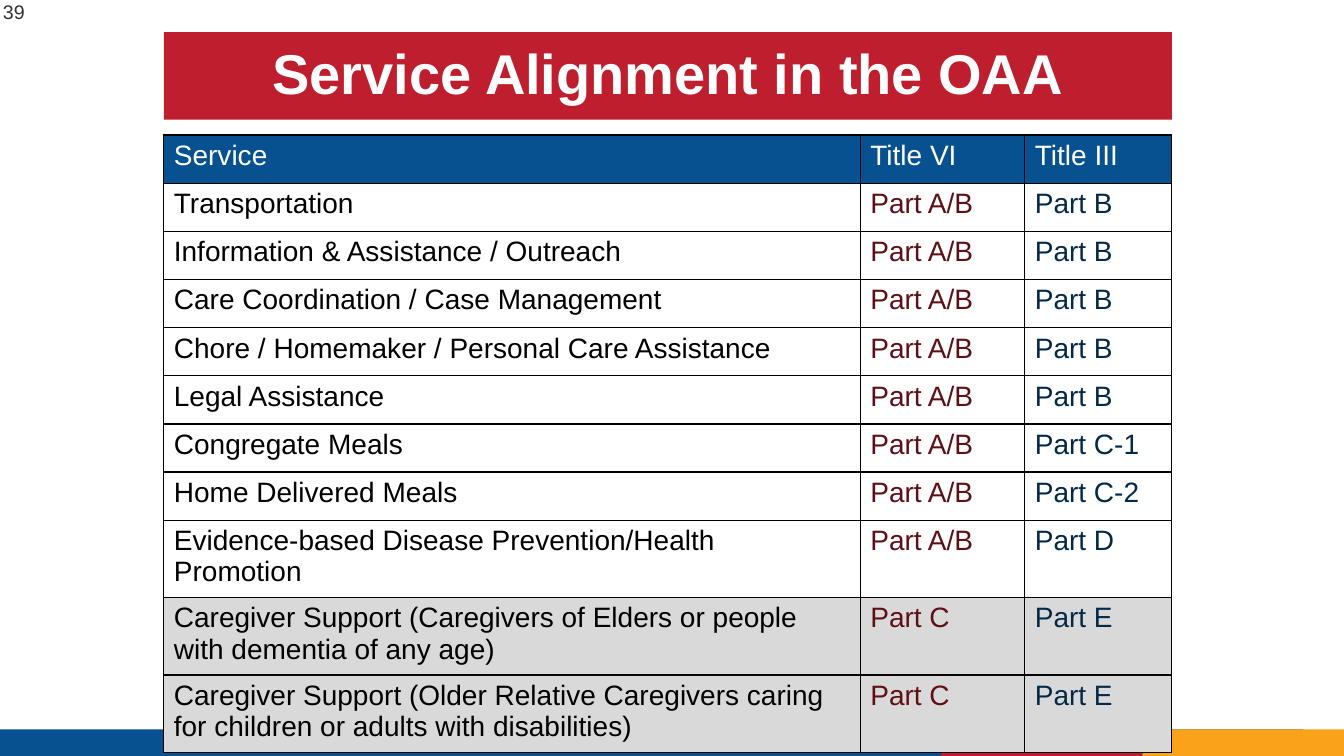
"""Build the slide that aligns services across two titles of the OAA."""
import pptx
import pptx.dml.color
import pptx.enum.shapes
import pptx.enum.text
import pptx.oxml
import pptx.oxml.ns
import pptx.util

Pt = pptx.util.Pt
ALIGN = pptx.enum.text.PP_ALIGN
MIDDLE = pptx.enum.text.MSO_ANCHOR.MIDDLE

SERVICES = [
    ("Service", "Title VI", "Title III"),
    ("Transportation", "Part A/B", "Part B"),
    ("Information & Assistance / Outreach", "Part A/B", "Part B"),
    ("Care Coordination / Case Management", "Part A/B", "Part B"),
    ("Chore / Homemaker / Personal Care Assistance", "Part A/B", "Part B"),
    ("Legal Assistance", "Part A/B", "Part B"),
    ("Congregate Meals", "Part A/B", "Part C-1"),
    ("Home Delivered Meals", "Part A/B", "Part C-2"),
    ("Evidence-based Disease Prevention/Health Promotion", "Part A/B", "Part D"),
    ("Caregiver Support (Caregivers of Elders or people with dementia of any age)",
     "Part C", "Part E"),
    ("Caregiver Support (Older Relative Caregivers caring for children or adults "
     "with disabilities)", "Part C", "Part E"),
]


def color(value):
    return pptx.dml.color.RGBColor.from_string(value)


def write(frame, text, size=20, fill="000000", bold=False, align=ALIGN.LEFT,
          line_spacing=1.0, space_after=0):
    frame.word_wrap = True
    paragraph = frame.paragraphs[0]
    paragraph.text = text
    paragraph.alignment = align
    paragraph.line_spacing = line_spacing
    paragraph.space_before = Pt(0)
    paragraph.space_after = Pt(space_after)
    font = paragraph.runs[0].font
    font.name = "Arial"
    font.size = Pt(size)
    font.bold = bold
    font.color.rgb = color(fill)


class SlideBuilder:
    blue, red, orange = "075190", "BE1E2D", "F9A21A"
    white, gray = "FFFFFF", "D9D9D9"
    column_colors = ("000000", "5F0F16", "042948")

    def __init__(self, presentation):
        self.slide = presentation.slides.add_slide(presentation.slide_layouts[5])

    def bar(self, left, width, fill):
        shape = self.slide.shapes.add_shape(
            pptx.enum.shapes.MSO_SHAPE.RECTANGLE, Pt(left), Pt(521), Pt(width), Pt(19))
        shape.shadow.inherit = False
        shape.fill.solid()
        shape.fill.fore_color.rgb = color(fill)
        shape.line.fill.background()

    def number(self, text):
        box = self.slide.shapes.add_textbox(Pt(-5), Pt(-6), Pt(40), Pt(29))
        box.text_frame.vertical_anchor = MIDDLE
        write(box.text_frame, text, size=14, fill="333333", space_after=6)

    def title(self, text):
        title = self.slide.shapes.title
        title.left, title.top, title.width, title.height = Pt(117), Pt(23), Pt(720), Pt(62.5)
        title.fill.solid()
        title.fill.fore_color.rgb = color(self.red)
        title.text_frame.auto_size = pptx.enum.text.MSO_AUTO_SIZE.NONE
        title.text_frame.vertical_anchor = MIDDLE
        write(title.text_frame, text, size=40, fill=self.white, bold=True,
              align=ALIGN.CENTER, line_spacing=0.9)

    def border(self, cell):
        properties = cell._tc.get_or_add_tcPr()
        for side in ("lnL", "lnR", "lnT", "lnB"):
            properties.append(pptx.oxml.parse_xml(
                f'<a:{side} {pptx.oxml.ns.nsdecls("a")} w="12700"><a:solidFill>'
                f'<a:srgbClr val="000000"/></a:solidFill></a:{side}>'))

    def table(self, rows, widths, heights):
        table = self.slide.shapes.add_table(
            len(rows), len(widths), Pt(117), Pt(96.5), Pt(sum(widths)), Pt(sum(heights))).table
        table.horz_banding = False
        for column, width in zip(table.columns, widths):
            column.width = Pt(width)
        for row, height in zip(table.rows, heights):
            row.height = Pt(height)
        for row_index, values in enumerate(rows):
            header = row_index == 0
            caregiver = values[0].startswith("Caregiver")
            fill = self.blue if header else self.gray if caregiver else self.white
            for column_index, value in enumerate(values):
                cell = table.cell(row_index, column_index)
                self.border(cell)
                cell.fill.solid()
                cell.fill.fore_color.rgb = color(fill)
                write(cell.text_frame, value,
                      fill=self.white if header else self.column_colors[column_index])


def main():
    presentation = pptx.Presentation()
    presentation.slide_width, presentation.slide_height = Pt(960), Pt(540)
    builder = SlideBuilder(presentation)
    builder.bar(0, 931, builder.blue)
    builder.bar(816, 144, builder.orange)
    builder.bar(672, 144, builder.red)
    builder.number("39")
    builder.title("Service Alignment in the OAA")
    builder.table(SERVICES, widths=(497.5, 117.5, 105), heights=[34.4] * 9 + [55.3] * 2)
    presentation.save("out.pptx")


if __name__ == "__main__":
    main()
